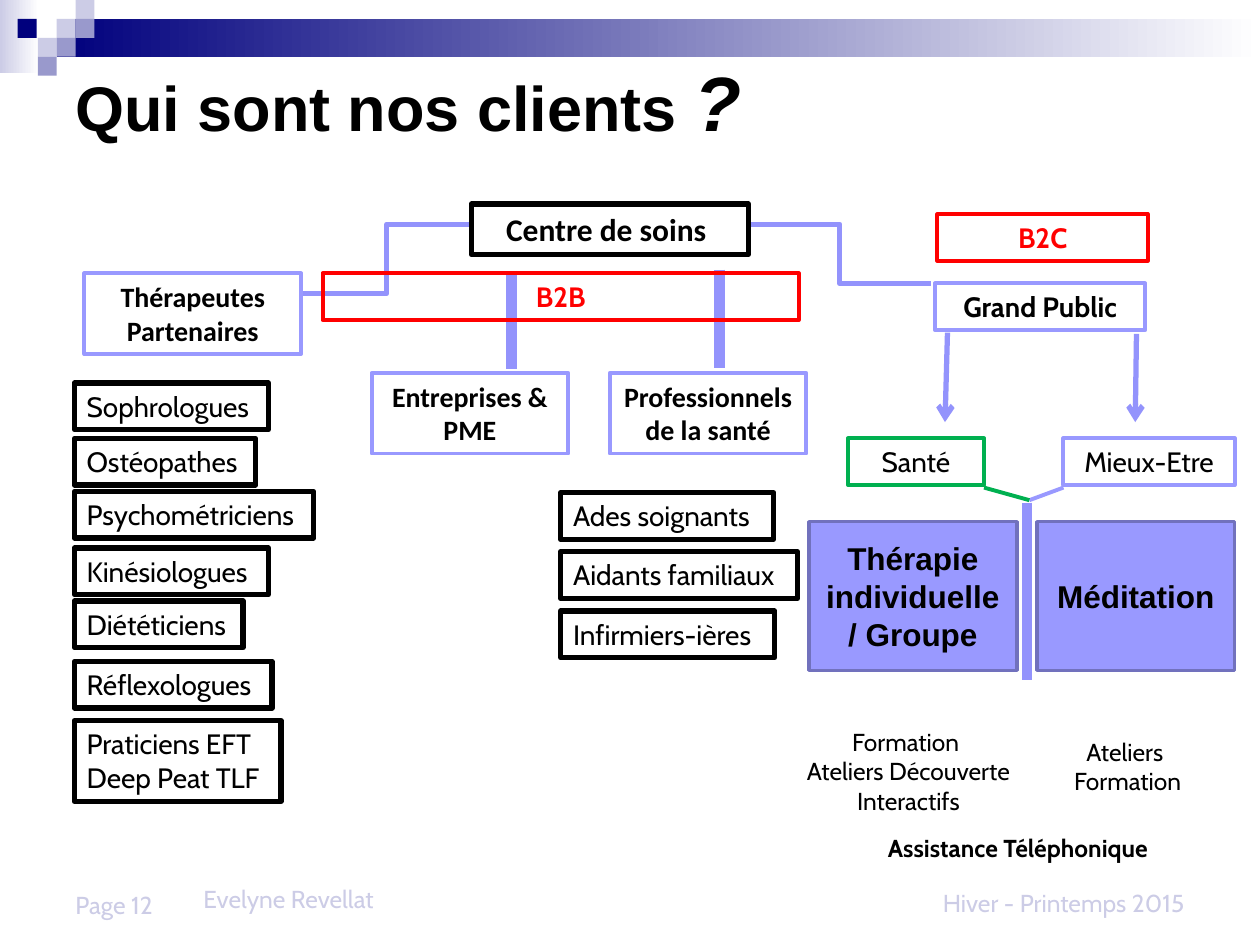
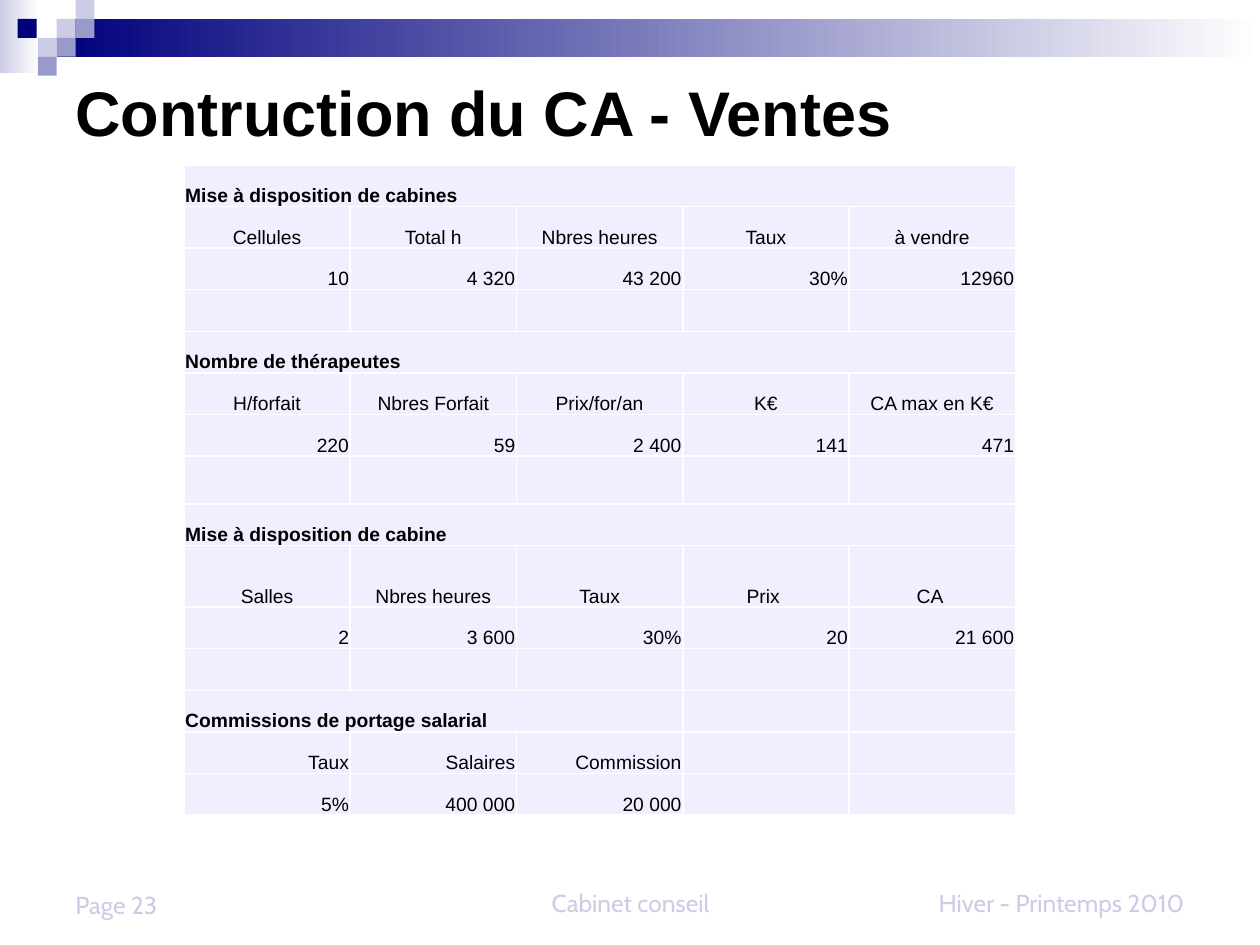
from lxml import etree
from pptx import Presentation
from pptx.dml.color import RGBColor
from pptx.enum import shapes, text
from pptx.oxml import ns
from pptx.util import Emu, Pt

PX = 9144  # EMU per px, 100 px to the inch
COLOURS = {
    "black": "000000", "white": "FFFFFF", "red": "FF0000", "green": "00B050",
    "navy": "00007D", "mist": "CCCCE6", "lavender": "9999CC",
    "violet": "9999FF", "link": "9393FC", "edge": "7171BD", "cell": "EFEFFF",
}
ALIGN = {"l": text.PP_ALIGN.LEFT, "c": text.PP_ALIGN.CENTER, "r": text.PP_ALIGN.RIGHT}
ANCHOR = {"t": text.MSO_ANCHOR.TOP, "m": text.MSO_ANCHOR.MIDDLE, "b": text.MSO_ANCHOR.BOTTOM}

# ---- Shared content: header bands and pixel squares ----
BANDS = [((0, 0, 31, 58), "mist"), ((45, 15, 955, 30), "navy")]
SQUARE = 15
SQUARES = [
    (45, 15, "mist"), (60, 0, "mist"), (60, 15, "lavender"), (30, 30, "mist"),
    (14, 15, "navy"), (45, 30, "lavender"), (30, 45, "lavender"),
]

# ---- Clients slide ----
CLIENTS_FOOTER = [
    ("Evelyne Revellat", (125, 680, 208, 50), "c"),
    ("Hiver - Printemps 2015", (717, 683, 233, 50), "r"),
    ("Page 12", (50, 683, 233, 52), "l"),
]
# text, box, line colour, format
CLIENT_BOXES = [
    ("Centre de soins ", (374, 162, 220, 40), "black",
     dict(width=3, size=18, font="Calibri", bold=True)),
    ("Grand Public", (742, 225, 167, 37), "violet", dict(bold=True)),
    ("Mieux-Etre", (844, 348, 136, 37), "violet", {}),
    ("Santé", (673, 348, 108, 37), "green", {}),
    ("Entreprises & PME", (295, 296, 156, 64), "violet", dict(font="Calibri", bold=True)),
    ("Professionnels de la santé", (484, 296, 156, 64), "violet",
     dict(font="Calibri", bold=True)),
    ("Thérapeutes Partenaires", (67, 217, 172, 64), "violet",
     dict(font="Calibri", bold=True)),
    ("B2C", (744, 170, 167, 37), "red", dict(bold=True, colour="red")),
    ("B2B", (256, 217, 378, 37), "red", dict(bold=True, colour="red")),
]
OFFERS = [
    ("Méditation", (823, 414, 157, 118)),
    ("Thérapie individuelle / Groupe", (642, 414, 165, 118)),
]
SERVICES = [
    ("Assistance Téléphonique", (675, 656, 266, 34), True),
    ("Formation \nAteliers Découverte Interactifs", (627, 572, 188, 81), False),
    ("Ateliers \nFormation", (831, 580, 128, 57), False),
]
PARTNERS_LEFT = 59
PARTNERS = [  # text, top, width, height
    ("Sophrologues", 304, 154, 37), ("Ostéopathes", 348, 144, 37),
    ("Psychométriciens", 390, 190, 37), ("Kinésiologues", 435, 154, 37),
    ("Diététiciens", 477, 134, 37), ("Réflexologues", 525, 157, 37),
    ("Praticiens EFT\nDeep Peat TLF", 572, 164, 64),
]
CARERS_LEFT, CARERS_TOP, CARERS_STEP = 445, 391, 47
CARERS = [("Ades soignants", 169), ("Aidants familiaux", 188), ("Infirmiers-ières", 170)]
# start, end, colour, width, format
LINKS = [
    ((594, 178), (739, 225), "link", 3, dict(elbow=True)),
    ((374, 178), (240, 233), "link", 3, dict(elbow=True)),
    ((752, 264), (750, 335), "link", 3, dict(arrow=True)),
    ((902, 265), (901, 335), "link", 3, dict(arrow=True)),
    ((844, 387), (817, 397), "violet", 2.25, {}),
    ((781, 387), (817, 397), "green", 2.25, {}),
    ((406, 215), (406, 293), "link", 6, {}),
    ((571, 214), (571, 292), "link", 6, {}),
    ((815, 399), (815, 540), "link", 6, {}),
]

# ---- Sales slide ----
SALES_FOOTER = [
    ("Cabinet conseil", (342, 683, 317, 50), "c"),
    ("Hiver - Printemps 2010", (717, 683, 233, 50), "r"),
    ("Page 23", (50, 683, 233, 52), "l"),
]
# heading, heading span, header alignment, header row, value row
SALES = [
    ("Mise à disposition de cabines", 5, "c",
     ["Cellules", "Total h", "Nbres heures", "Taux", "à vendre"],
     ["10", "4 320", "43 200", "30%", "12960"]),
    ("Nombre de thérapeutes", 5, "c",
     ["H/forfait", "Nbres Forfait", "Prix/for/an", "K€", "CA max en K€"],
     ["220", "59", "2 400", "141", "471"]),
    ("Mise à disposition de cabine", 5, "c",
     ["Salles", "Nbres heures", "Taux", "Prix ", "CA "],
     ["2", "3 600", "30%", "20", "21 600"]),
    ("Commissions de portage salarial", 3, "r",
     ["Taux", "Salaires", "Commission"], ["5%", "400 000", "20 000"]),
]
BLOCK_ROWS = 4  # heading, header, values, gap
COLUMNS, COLUMN_WIDTH, ROW_HEIGHT = 5, 132, 33
TALL_ROWS = {7: 38, 9: 49}


def px(*lengths):
    return [Emu(length * PX) for length in lengths]


def rgb(name):
    return RGBColor.from_string(COLOURS[name])


def write(frame, content, size=16, font="Cabin", colour="black", bold=False,
          italic=False, align="l"):
    """Fill a text frame, one paragraph per line of content."""
    for number, line in enumerate(content.split("\n")):
        paragraph = frame.add_paragraph() if number else frame.paragraphs[0]
        paragraph.alignment = ALIGN[align]
        run = paragraph.add_run()
        run.text = line
        run.font.size, run.font.name = Pt(size), font
        run.font.bold, run.font.italic = bold, italic
        run.font.color.rgb = rgb(colour)


def set_frame(frame, anchor="t", wrap=True, grow=False):
    frame.word_wrap = wrap
    frame.vertical_anchor = ANCHOR[anchor]
    frame.auto_size = (text.MSO_AUTO_SIZE.SHAPE_TO_FIT_TEXT if grow
                       else text.MSO_AUTO_SIZE.NONE)


def add_label(slide, content, box, anchor="t", grow=False, **style):
    frame = slide.shapes.add_textbox(*px(*box)).text_frame
    set_frame(frame, anchor, grow=grow)
    write(frame, content, **style)
    return frame


def add_rect(slide, box, fill=None, line=None, width=2.25):
    shape = slide.shapes.add_shape(shapes.MSO_SHAPE.RECTANGLE, *px(*box))
    shape.shadow.inherit = False
    if fill:
        shape.fill.solid()
        shape.fill.fore_color.rgb = rgb(fill)
    else:
        shape.fill.background()
    if line:
        shape.line.color.rgb = rgb(line)
        shape.line.width = Pt(width)
    else:
        shape.line.fill.background()
    return shape


def add_box(slide, content, box, line, width=2.25, wrap=True, align="c", **style):
    frame = add_rect(slide, box, line=line, width=width).text_frame
    set_frame(frame, wrap=wrap, grow=True)
    write(frame, content, align=align, **style)


def add_link(slide, start, end, colour, width, elbow=False, arrow=False):
    kind = shapes.MSO_CONNECTOR.ELBOW if elbow else shapes.MSO_CONNECTOR.STRAIGHT
    connector = slide.shapes.add_connector(kind, *px(*start, *end))
    connector.line.color.rgb = rgb(colour)
    connector.line.width = Pt(width)
    if arrow:
        etree.SubElement(connector.line._get_or_add_ln(), ns.qn("a:tailEnd"), type="arrow")
    etree.SubElement(connector._element.spPr, ns.qn("a:effectLst"))


def add_page(presentation, title, title_top, footer):
    """Add a slide with the header, title and footer; return it and the title frame."""
    slide = presentation.slides.add_slide(presentation.slide_layouts[6])
    for box, colour in BANDS:
        fill = add_rect(slide, box, fill=colour).fill
        fill.gradient()
        fill.gradient_angle = 0
        for stop, name, position in zip(fill.gradient_stops, (colour, "white"), (0, 1)):
            stop.color.rgb = rgb(name)
            stop.position = position
    for left, top, colour in SQUARES:
        add_rect(slide, (left, top, SQUARE, SQUARE), fill=colour)
    frame = add_label(slide, title, (50, title_top, 900, 150), anchor="m",
                      size=36, font="Arial", bold=True)
    for content, box, align in footer:
        add_label(slide, content, box, anchor="b", size=14, colour="mist", align=align)
    return slide, frame


def build_clients(presentation):
    slide, title = add_page(presentation, "Qui sont nos clients ", 5, CLIENTS_FOOTER)
    write(title, "?", size=44, font="Arial", bold=True, italic=True)
    for start, end, colour, width, style in LINKS:
        add_link(slide, start, end, colour, width, **style)
    for content, box in OFFERS:
        frame = add_rect(slide, box, fill="violet", line="edge", width=2).text_frame
        set_frame(frame, "m")
        write(frame, content, size=18, font="Arial", bold=True, align="c")
    for content, box, bold in SERVICES:
        add_label(slide, content, box, grow=True, size=14, bold=bold, align="c")
    for content, box, line, style in CLIENT_BOXES:
        add_box(slide, content, box, line, **style)
    # Lists of partners and carers
    items = [(name, (PARTNERS_LEFT, top, width, height))
             for name, top, width, height in PARTNERS]
    items += [(name, (CARERS_LEFT, CARERS_TOP + row * CARERS_STEP, width, 37))
              for row, (name, width) in enumerate(CARERS)]
    for name, box in items:
        add_box(slide, name, box, "black", width=3, wrap=False, align="l")


def format_cell(cell):
    cell.fill.solid()
    cell.fill.fore_color.rgb = rgb("cell")
    cell.vertical_anchor = ANCHOR["b"]
    cell.margin_left = cell.margin_right = cell.margin_top = px(1)[0]
    cell.margin_bottom = 0
    properties = cell._tc.get_or_add_tcPr()
    for place, side in enumerate(("lnL", "lnR", "lnT", "lnB")):
        border = etree.Element(ns.qn(f"a:{side}"), w=str(Pt(1)))
        fill = etree.SubElement(border, ns.qn("a:solidFill"))
        etree.SubElement(fill, ns.qn("a:srgbClr"), val=COLOURS["white"])
        properties.insert(place, border)


def build_sales(presentation):
    slide, _ = add_page(presentation, "Contruction du CA - Ventes", 13, SALES_FOOTER)
    rows = len(SALES) * BLOCK_ROWS - 1
    heights = [TALL_ROWS.get(row, ROW_HEIGHT) for row in range(rows)]
    table = slide.shapes.add_table(
        rows, COLUMNS, *px(146, 131, COLUMNS * COLUMN_WIDTH, sum(heights))).table
    table.first_row = table.horz_banding = False
    for column in table.columns:
        column.width = px(COLUMN_WIDTH)[0]
    for row, height in zip(table.rows, heights):
        row.height = px(height)[0]
    for cell in table.iter_cells():
        format_cell(cell)
    for block, (heading, span, header_align, header, values) in enumerate(SALES):
        top = block * BLOCK_ROWS
        table.cell(top, 0).merge(table.cell(top, span - 1))
        lines = [([heading], "l"), (header, header_align), (values, "r")]
        for offset, (contents, align) in enumerate(lines):
            for column, content in enumerate(contents):
                write(table.cell(top + offset, column).text_frame, content, size=11,
                      font="Arial", bold=offset == 0, align=align)


def main():
    presentation = Presentation()
    presentation.slide_width, presentation.slide_height = px(1000, 750)
    build_clients(presentation)
    build_sales(presentation)
    presentation.save("out.pptx")


if __name__ == "__main__":
    main()
